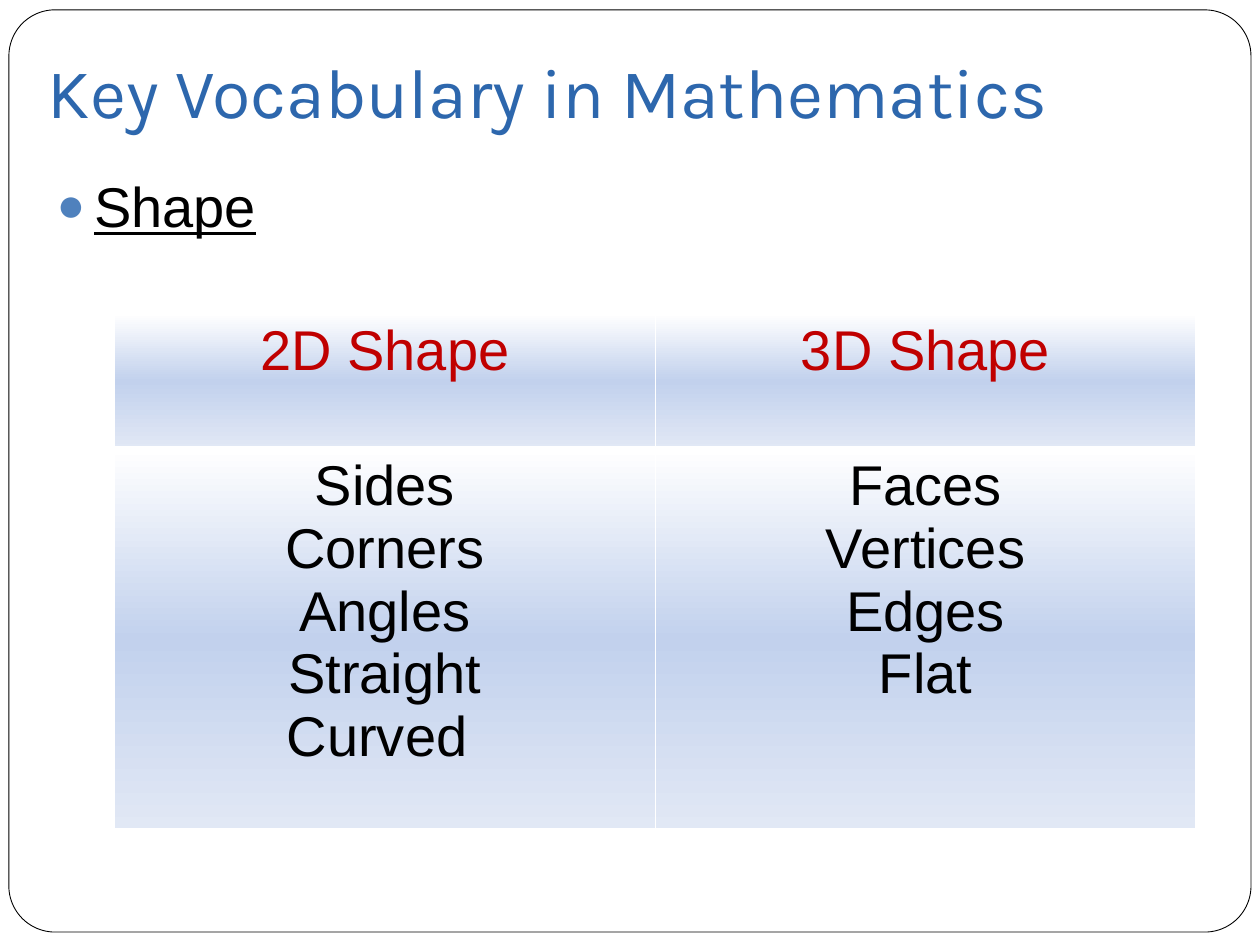
"""Build the shape vocabulary slide with its two-column word table."""
import pptx
import pptx.dml.color
import pptx.enum.shapes
import pptx.enum.text
import pptx.oxml
import pptx.oxml.ns
import pptx.util

Cm = pptx.util.Cm
Pt = pptx.util.Pt
RGBColor = pptx.dml.color.RGBColor
ALIGN = pptx.enum.text.PP_ALIGN
ANCHOR = pptx.enum.text.MSO_ANCHOR

WHITE = RGBColor(0xFF, 0xFF, 0xFF)
BLACK = RGBColor(0x00, 0x00, 0x00)
TITLE_BLUE = RGBColor(0x2D, 0x67, 0xAD)
BULLET_BLUE = RGBColor(0x4F, 0x81, 0xBD)
HEADING_RED = RGBColor(0xC0, 0x00, 0x00)
GRADIENT = [(0, WHITE), (50, RGBColor(0xC2, 0xD1, 0xED)), (100, RGBColor(0xE1, 0xE8, 0xF5))]

TITLE = "Key Vocabulary in Mathematics"
TOPIC = "Shape"
VOCABULARY = [
    ("2D Shape", ["Sides", "Corners", "Angles", "Straight", "Curved "]),
    ("3D Shape", ["Faces", "Vertices", "Edges", "Flat"]),
]
COLUMN_WIDTH = 10.9
ROW_HEIGHTS = [2.72, 7.67]


def style(paragraph, name, size, color):
    paragraph.font.name = name
    paragraph.font.size = Pt(size)
    paragraph.font.color.rgb = color


def append_xml(parent, xml):
    namespace = pptx.oxml.ns.nsdecls("a")
    parent.append(pptx.oxml.parse_xml(xml.replace(">", f" {namespace}>", 1)))


def add_bullet(paragraph):
    properties = paragraph._p.get_or_add_pPr()
    properties.set("marL", str(Cm(0.76)))
    properties.set("indent", str(-Cm(0.76)))
    children = [
        f'<a:buClr><a:srgbClr val="{BULLET_BLUE}"/></a:buClr>',
        '<a:buSzPct val="85000"></a:buSzPct>',
        '<a:buFont typeface="Arial"></a:buFont>',
        '<a:buChar char="●"></a:buChar>',
    ]
    for position, xml in enumerate(children):
        append_xml(properties, xml)
        properties.insert(1 + position, properties[-1])


def format_cell(cell, bottom_width):
    properties = cell._tc.get_or_add_tcPr()
    for side, width in zip("LRTB", [1, 1, 1, bottom_width]):
        append_xml(properties, f'<a:ln{side} w="{Pt(width)}"><a:solidFill>'
                   f'<a:srgbClr val="{WHITE}"/></a:solidFill></a:ln{side}>')
    stops = "".join(f'<a:gs pos="{place * 1000}"><a:srgbClr val="{color}"/></a:gs>'
                    for place, color in GRADIENT)
    append_xml(properties, f'<a:gradFill><a:gsLst>{stops}</a:gsLst>'
               '<a:lin ang="5400000" scaled="0"/></a:gradFill>')


def fill_cell(cell, words, color, bottom_width):
    cell.text_frame.text = "\n".join(words)
    for paragraph in cell.text_frame.paragraphs:
        paragraph.alignment = ALIGN.CENTER
        style(paragraph, "Arial", 32, color)
    format_cell(cell, bottom_width)


def add_title(page):
    title = page.shapes.title
    title.left, title.top, title.width, title.height = Cm(0.71), Cm(0.76), Cm(23.42), Cm(2.16)
    text = title.text_frame
    text.text = TITLE
    text.vertical_anchor = ANCHOR.BOTTOM
    text.margin_bottom = Cm(0.25)
    text.paragraphs[0].alignment = ALIGN.LEFT
    style(text.paragraphs[0], "Karla", 40, TITLE_BLUE)


def add_frame(page):
    frame = page.shapes.add_shape(pptx.enum.shapes.MSO_SHAPE.ROUNDED_RECTANGLE,
                                  Cm(0.18), Cm(0.2), Cm(25.04), Cm(18.59))
    frame.adjustments[0] = 0.05
    frame.shadow.inherit = False
    frame.fill.solid()
    frame.fill.fore_color.rgb = WHITE
    frame.line.color.rgb = BLACK
    frame.line.width = Pt(0.5)
    page.shapes.title.element.addprevious(frame.element)


def add_topic(page):
    box = page.shapes.add_textbox(Cm(0.89), Cm(3.33), Cm(23.24), Cm(13.79))
    box.text_frame.word_wrap = True
    paragraph = box.text_frame.paragraphs[0]
    paragraph.text = TOPIC
    paragraph.space_before = Pt(5.8)
    style(paragraph, "Arial", 32, BLACK)
    paragraph.runs[0].font.underline = True
    add_bullet(paragraph)


def add_vocabulary(page):
    table = page.shapes.add_table(len(ROW_HEIGHTS), len(VOCABULARY), Cm(2.31), Cm(6.32),
                                  Cm(COLUMN_WIDTH * len(VOCABULARY)), Cm(sum(ROW_HEIGHTS))).table
    table.first_row = table.horz_banding = False
    for row, height in zip(table.rows, ROW_HEIGHTS):
        row.height = Cm(height)
    for index, (heading, words) in enumerate(VOCABULARY):
        table.columns[index].width = Cm(COLUMN_WIDTH)
        fill_cell(table.cell(0, index), [heading], HEADING_RED, 3)
        fill_cell(table.cell(1, index), words, BLACK, 1)


def main():
    deck = pptx.Presentation()
    deck.slide_width, deck.slide_height = Cm(25.4), Cm(19.05)
    page = deck.slides.add_slide(deck.slide_layouts[5])
    add_title(page)
    add_frame(page)
    add_topic(page)
    add_vocabulary(page)
    deck.save("out.pptx")


if __name__ == "__main__":
    main()
